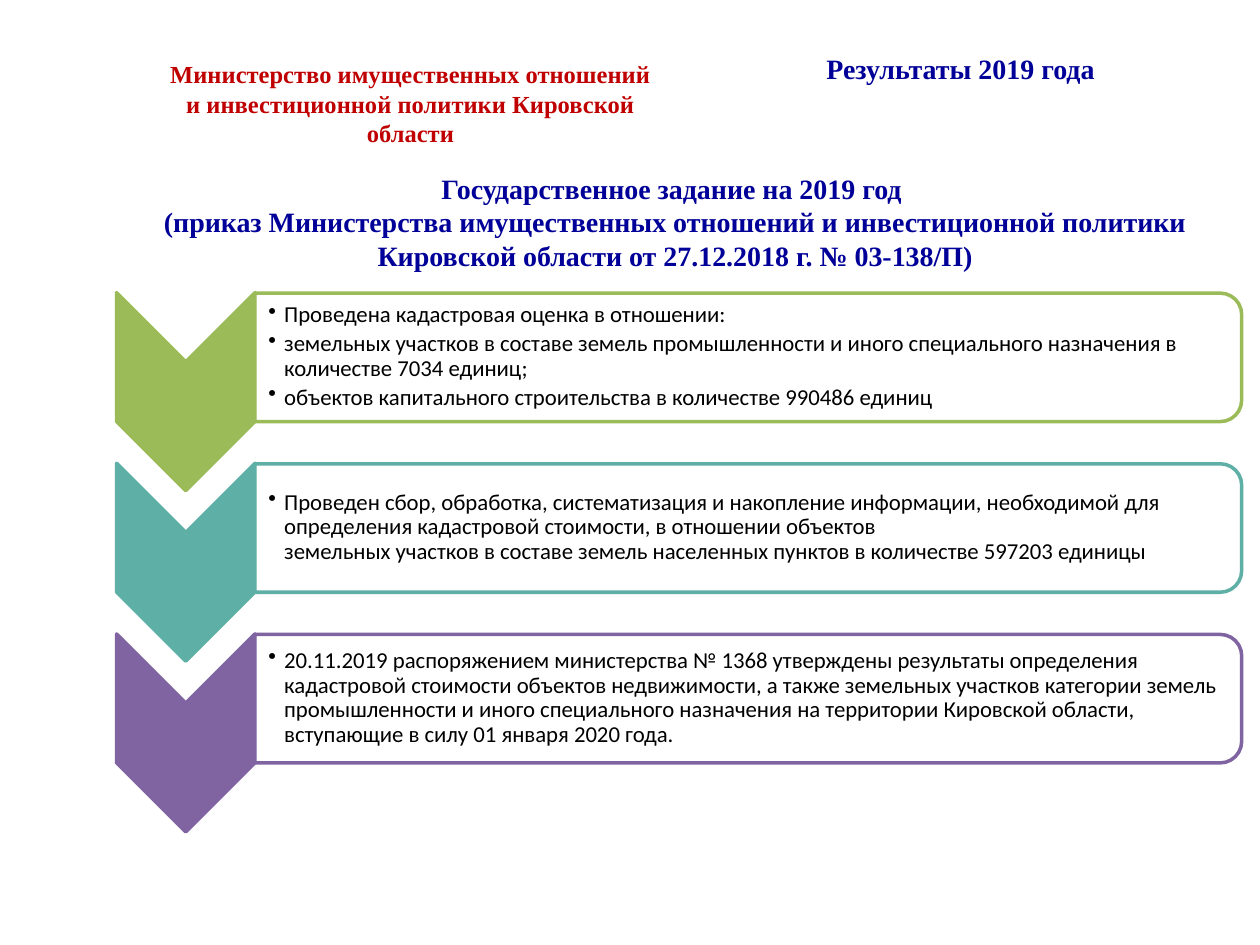
from dataclasses import dataclass

from lxml.etree import SubElement
from pptx import Presentation
from pptx.dml.color import RGBColor
from pptx.enum.shapes import MSO_SHAPE
from pptx.enum.text import MSO_ANCHOR, PP_ALIGN
from pptx.oxml.ns import qn
from pptx.slide import Slide
from pptx.util import Cm, Pt

COLORS = {
    "red": "C00000",
    "navy": "000099",
    "black": "000000",
    "white": "FFFFFF",
    "green": "9BBB59",
    "teal": "5EAFA6",
    "purple": "8064A2",
}

STAGES = [
    ("green", [
        "Проведена кадастровая оценка в отношении:",
        "земельных участков в составе земель промышленности и иного "
        "специального назначения в количестве 7034 единиц;",
        "объектов капитального строительства в количестве 990486 единиц",
    ]),
    ("teal", [
        "Проведен сбор, обработка, систематизация и накопление информации, "
        "необходимой для определения кадастровой стоимости, в отношении объектов\v"
        "земельных участков в составе земель населенных пунктов "
        "в количестве 597203 единицы",
    ]),
    ("purple", [
        "20.11.2019 распоряжением министерства № 1368 утверждены результаты "
        "определения кадастровой стоимости объектов недвижимости, а также "
        "земельных участков категории земель промышленности и иного специального "
        "назначения на территории Кировской области, вступающие в силу "
        "01 января 2020 года.",
    ]),
]
STAGE_STEP = 3.44


@dataclass
class StagePage:
    """Holds the page and the style of its elements."""

    page: Slide
    heading_font: str = "Times New Roman"
    body_font: str = "Calibri"
    body_size: float = 13
    outline: float = 2

    def text_box(self, left, top, width, height, anchor):
        """Add an empty wrapping text box."""
        box = self.page.shapes.add_textbox(Cm(left), Cm(top), Cm(width), Cm(height))
        box.text_frame.word_wrap = True
        box.text_frame.vertical_anchor = anchor
        return box

    def format_runs(self, para, font, size, color, bold=False):
        """Apply one font style to every run of a paragraph."""
        for span in para.runs:
            span.font.name = font
            span.font.size = Pt(size)
            span.font.bold = bold
            span.font.color.rgb = RGBColor.from_string(COLORS[color])

    def heading(self, text, left, top, width, height, size, color, anchor=MSO_ANCHOR.TOP):
        """Add a centred bold heading."""
        box = self.text_box(left, top, width, height, anchor)
        para = box.text_frame.paragraphs[0]
        para.text = text
        para.alignment = PP_ALIGN.CENTER
        self.format_runs(para, self.heading_font, size, color, bold=True)

    def turned_shape(self, kind, left, top, width, height, fill, line):
        """Add a preset shape turned a quarter clockwise."""
        shape = self.page.shapes.add_shape(kind, Cm(left), Cm(top), Cm(width), Cm(height))
        shape.rotation = 90
        shape.shadow.inherit = False
        shape.fill.solid()
        shape.fill.fore_color.rgb = RGBColor.from_string(COLORS[fill])
        shape.line.color.rgb = RGBColor.from_string(COLORS[line])
        shape.line.width = Pt(self.outline)
        return shape

    def bullets(self, items, left, top, width, height):
        """Add a bulleted list centred vertically."""
        box = self.text_box(left, top, width, height, MSO_ANCHOR.MIDDLE)
        frame = box.text_frame
        frame.margin_left = Cm(0.25)
        frame.margin_top = frame.margin_right = frame.margin_bottom = Cm(0.03)
        for index, item in enumerate(items):
            para = frame.add_paragraph() if index else frame.paragraphs[0]
            para.text = item
            para.line_spacing = 0.9
            para.space_after = Pt(2.4)
            self.format_runs(para, self.body_font, self.body_size, "black")
            properties = para._p.get_or_add_pPr()
            properties.set("marL", str(Cm(0.32)))
            properties.set("indent", str(-Cm(0.32)))
            SubElement(properties, qn("a:buChar"), char="•")

    def stage(self, items, color, offset):
        """Add a chevron with its panel and list."""
        self.turned_shape(MSO_SHAPE.CHEVRON, 1.75, 6.5 + offset, 3.99, 2.79, color, color)
        panel = self.turned_shape(
            MSO_SHAPE.ROUND_2_SAME_RECTANGLE, 13.79, -2.74 + offset, 2.59, 19.89, "white", color
        )
        tint = panel._element.spPr.find(qn("a:solidFill")).find(qn("a:srgbClr"))
        SubElement(tint, qn("a:alpha"), val="90000")
        self.bullets(items, 5.16, 6.02 + offset, 19.76, 2.34)


def main():
    """Build and save the deck."""
    deck = Presentation()
    deck.slide_width, deck.slide_height = Cm(25.4), Cm(19.05)
    results = StagePage(deck.slides.add_slide(deck.slide_layouts[6]))
    results.heading(
        "Министерство имущественных отношений и инвестиционной политики Кировской области",
        3.18, 0.94, 10.19, 2.29, 14, "red", MSO_ANCHOR.MIDDLE,
    )
    results.heading("Результаты 2019 года", 13.69, 0.91, 11.35, 0.94, 16, "navy")
    results.heading(
        "Государственное задание на 2019 год \v(приказ Министерства имущественных отношений "
        "и инвестиционной политики Кировской области от 27.12.2018 г. № 03-138/П)",
        2.18, 3.33, 22.86, 2.21, 16, "navy",
    )
    for index, (color, items) in enumerate(STAGES):
        results.stage(items, color, index * STAGE_STEP)
    deck.save("out.pptx")


if __name__ == "__main__":
    main()
